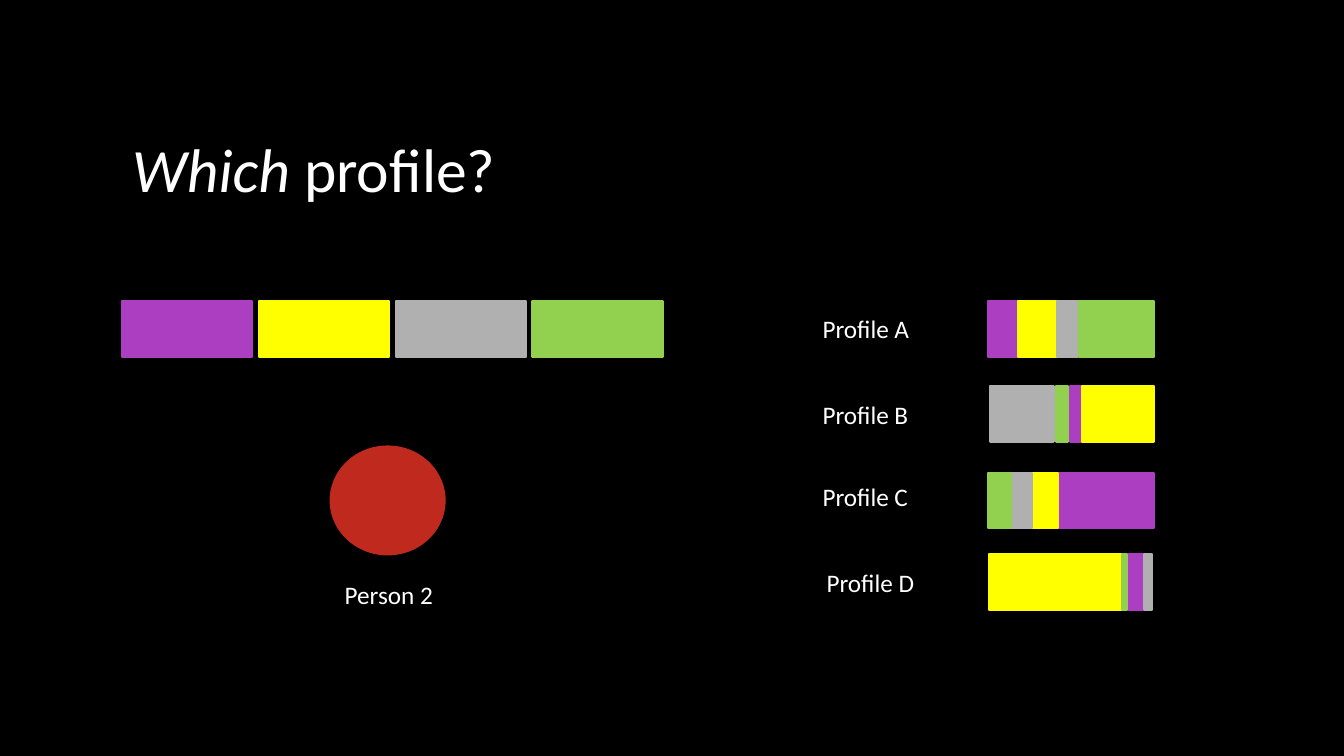
from pptx import Presentation
from pptx.dml.color import RGBColor
from pptx.enum.shapes import MSO_SHAPE
from pptx.enum.text import MSO_ANCHOR, MSO_AUTO_SIZE, PP_ALIGN
from pptx.util import Inches, Pt

RECTANGLE = MSO_SHAPE.RECTANGLE
ELLIPSE = MSO_SHAPE.OVAL
LEFT = PP_ALIGN.LEFT
TOP = MSO_ANCHOR.TOP
NO_FIT = MSO_AUTO_SIZE.NONE
TITLE_ONLY = 5

COLOURS = {
    "background": "000000",
    "text": "FFFFFF",
    "person": "C02A1E",
    "purple": "AC3EC1",
    "yellow": "FFFF00",
    "grey": "B0B0B0",
    "green": "92D050",
}
FONT = "Calibri"
BAR_HEIGHT = 0.55
KEY_LEFT, KEY_TOP, KEY_WIDTH, KEY_STEP = 1.21, 2.99, 1.29, 1.357

# Each profile: label, label left, label top, bar top, {colour: (left, width)}
PROFILES = [
    ("Profile A", 8.06, 3.06, 2.99,
     {"purple": (9.8, 0.3), "yellow": (10.1, 0.38),
      "grey": (10.48, 0.21), "green": (10.7, 0.75)}),
    ("Profile B", 8.06, 3.91, 3.83,
     {"purple": (10.61, 0.17), "yellow": (10.73, 0.72),
      "grey": (9.82, 0.63), "green": (10.47, 0.12)}),
    ("Profile C", 8.06, 4.73, 4.69,
     {"purple": (10.49, 0.96), "yellow": (10.24, 0.25),
      "grey": (10.03, 0.21), "green": (9.8, 0.23)}),
    ("Profile D", 8.1, 5.58, 5.5,
     {"purple": (11.19, 0.15), "yellow": (9.81, 1.33),
      "grey": (11.35, 0.08), "green": (11.13, 0.05)}),
]


def colour(name):
    return RGBColor.from_string(COLOURS[name])


def add_block(page, preset, left, top, width, height, fill):
    block = page.shapes.add_shape(
        preset, Inches(left), Inches(top), Inches(width), Inches(height))
    block.shadow.inherit = False
    block.fill.solid()
    block.fill.fore_color.rgb = colour(fill)
    block.line.color.rgb = colour(fill)
    block.line.width = Pt(1.5)


def add_span(para, text, size=18, italic=False):
    span = para.add_run()
    span.text = text
    span.font.name = FONT
    span.font.size = Pt(size)
    span.font.italic = italic
    span.font.color.rgb = colour("text")


def add_label(page, text, left, top):
    box = page.shapes.add_textbox(
        Inches(left), Inches(top), Inches(1.14), Inches(0.4))
    box.text_frame.word_wrap = True
    add_span(box.text_frame.paragraphs[0], text)


def set_title(page):
    title = page.shapes.title
    title.left, title.top = Inches(1.21), Inches(1.25)
    title.width, title.height = Inches(4), Inches(0.84)
    frame = title.text_frame
    frame.auto_size = NO_FIT
    frame.vertical_anchor = TOP
    para = frame.paragraphs[0]
    para.alignment = LEFT
    add_span(para, "Which", size=44, italic=True)
    add_span(para, " profile?", size=44)


def main():
    deck = Presentation()
    deck.slide_width, deck.slide_height = Inches(13.33), Inches(7.5)
    page = deck.slides.add_slide(deck.slide_layouts[TITLE_ONLY])
    page.background.fill.solid()
    page.background.fill.fore_color.rgb = colour("background")
    set_title(page)

    # Person
    add_block(page, ELLIPSE, 3.28, 4.43, 1.13, 1.07, "person")
    add_label(page, "Person 2", 3.32, 5.7)

    # Four equal blocks
    for index, fill in enumerate(("purple", "yellow", "grey", "green")):
        add_block(page, RECTANGLE, KEY_LEFT + index * KEY_STEP, KEY_TOP,
                  KEY_WIDTH, BAR_HEIGHT, fill)

    # Profiles to choose from
    for label, label_left, label_top, bar_top, parts in PROFILES:
        add_label(page, label, label_left, label_top)
        for fill, (left, width) in parts.items():
            add_block(page, RECTANGLE, left, bar_top, width, BAR_HEIGHT, fill)

    deck.save("out.pptx")


if __name__ == "__main__":
    main()
